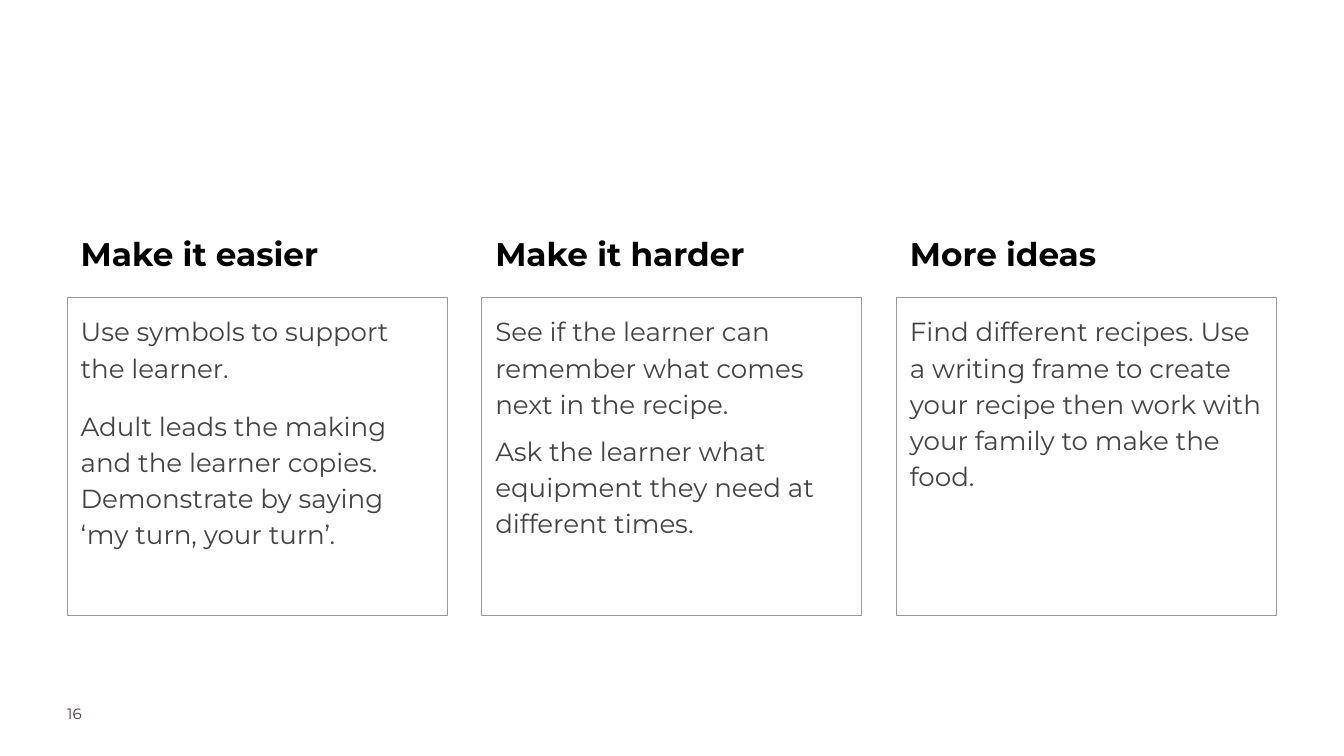
from dataclasses import dataclass

import pptx
import pptx.dml.color
import pptx.enum.shapes
import pptx.enum.text
import pptx.util

PX = 9144


@dataclass(frozen=True)
class Theme:
    font: str = "Montserrat"
    paper: str = "FFFFFF"
    heading: str = "000000"
    body: str = "434343"
    border: str = "999999"
    number: str = "4B3241"
    heading_size: int = 35
    body_size: int = 28
    number_size: int = 16


@dataclass(frozen=True)
class Style:
    size: int
    color: str
    bold: bool = False
    line_spacing: float = 1.0
    gap: int = 0


@dataclass(frozen=True)
class Card:
    heading: str
    paragraphs: tuple[str, ...]
    gap: int = 12


THEME = Theme()
LEFT, PITCH, WIDTH = 100, 617, 565
HEADING_TOP, HEADING_HEIGHT = 310, 99
BODY_TOP, BODY_HEIGHT = 443, 472
INSET = 20

CARDS = (
    Card(
        "Make it easier",
        (
            "Use symbols to support the learner.",
            "Adult leads the making and the learner copies. "
            "Demonstrate by saying ‘my turn, your turn’.",
        ),
        gap=24,
    ),
    Card(
        "Make it harder",
        (
            "See if the learner can remember what comes next in the recipe.",
            "Ask the learner what equipment they need at different times.",
        ),
    ),
    Card(
        "More ideas",
        (
            "Find different recipes. Use a writing frame to create your recipe "
            "then work with your family to make the food.",
        ),
    ),
)


def px(n: int) -> int:
    return n * PX


def rgb(color: str) -> pptx.dml.color.RGBColor:
    return pptx.dml.color.RGBColor.from_string(color)


def write(sp, paragraphs: tuple[str, ...], style: Style, inset: int) -> None:
    tf = sp.text_frame
    tf.word_wrap = True
    tf.vertical_anchor = pptx.enum.text.MSO_ANCHOR.TOP
    tf.margin_left = tf.margin_right = px(inset)
    tf.margin_top = tf.margin_bottom = px(inset)
    for i, text in enumerate(paragraphs):
        p = tf.add_paragraph() if i else tf.paragraphs[0]
        p.text = text
        p.alignment = pptx.enum.text.PP_ALIGN.LEFT
        p.line_spacing = style.line_spacing
        p.space_before = pptx.util.Pt(style.gap if i else 0)
        p.font.name = THEME.font
        p.font.size = pptx.util.Pt(style.size)
        p.font.bold = style.bold
        p.font.color.rgb = rgb(style.color)


def add_box(s, x: int, y: int, w: int, h: int):
    sp = s.shapes.add_shape(
        pptx.enum.shapes.MSO_SHAPE.RECTANGLE, px(x), px(y), px(w), px(h)
    )
    sp.shadow.inherit = False
    return sp


def add_card(s, card: Card, x: int) -> None:
    heading = add_box(s, x, HEADING_TOP, WIDTH, HEADING_HEIGHT)
    heading.fill.solid()
    heading.fill.fore_color.rgb = rgb(THEME.paper)
    heading.line.fill.background()
    style = Style(THEME.heading_size, THEME.heading, bold=True, line_spacing=1.3)
    write(heading, (card.heading,), style, INSET)

    body = add_box(s, x, BODY_TOP, WIDTH, BODY_HEIGHT)
    body.fill.background()
    body.line.color.rgb = rgb(THEME.border)
    body.line.width = pptx.util.Pt(0.75)
    style = Style(THEME.body_size, THEME.body, line_spacing=1.15, gap=card.gap)
    write(body, card.paragraphs, style, INSET)


def add_page_number(s, number: int) -> None:
    sp = s.shapes.add_textbox(px(LEFT), px(1048), px(157), px(39))
    write(sp, (str(number),), Style(THEME.number_size, THEME.number), 0)


def main() -> None:
    prs = pptx.Presentation()
    prs.slide_width, prs.slide_height = px(2000), px(1125)
    s = prs.slides.add_slide(prs.slide_layouts[6])
    s.background.fill.solid()
    s.background.fill.fore_color.rgb = rgb(THEME.paper)
    for i, card in enumerate(CARDS):
        add_card(s, card, LEFT + i * PITCH)
    add_page_number(s, 16)
    prs.save("out.pptx")


if __name__ == "__main__":
    main()
